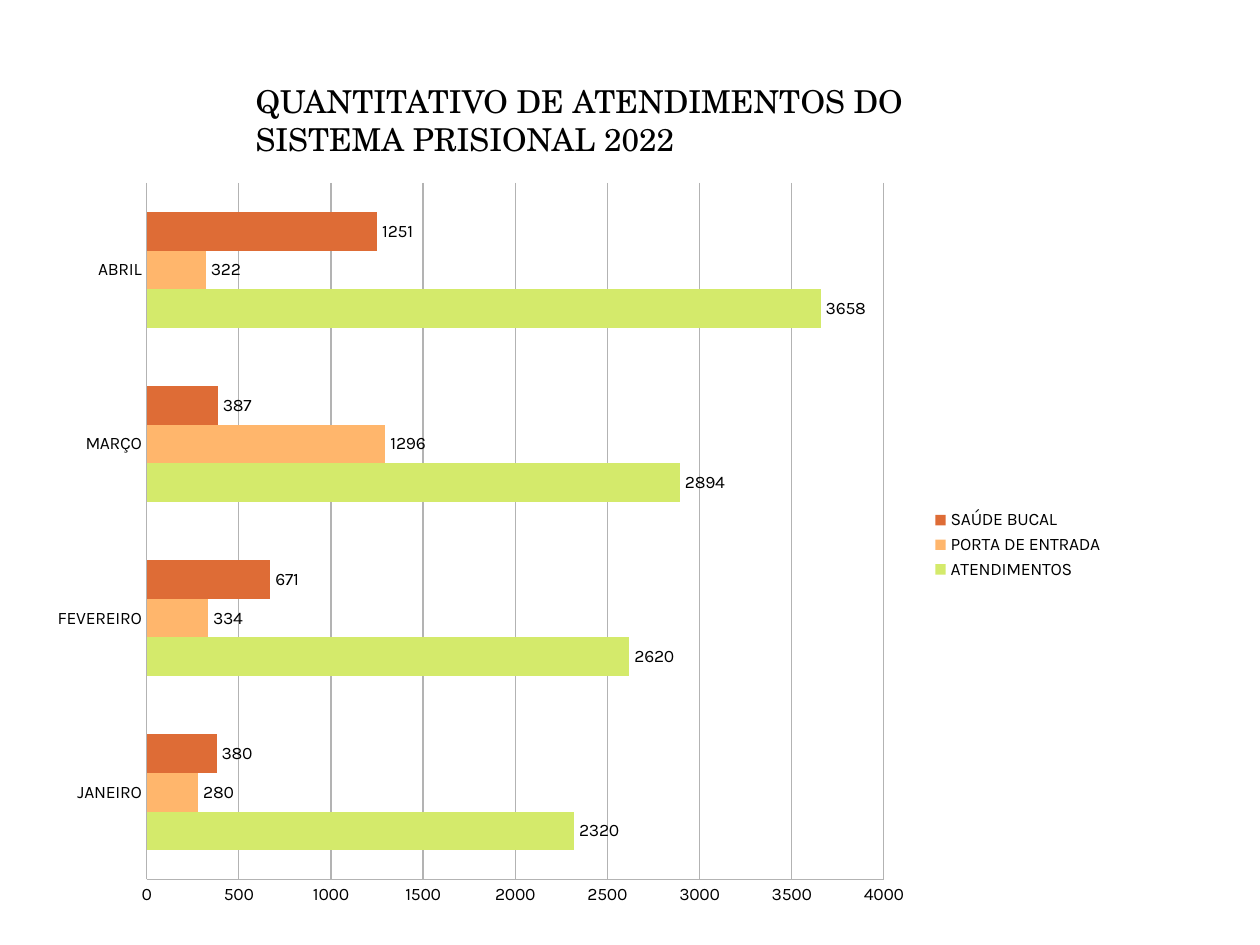
from lxml import etree
from pptx import Presentation
from pptx.chart.data import CategoryChartData
from pptx.dml.color import RGBColor
from pptx.enum.chart import (XL_CHART_TYPE, XL_LABEL_POSITION,
                             XL_LEGEND_POSITION, XL_TICK_MARK)
from pptx.enum.text import MSO_ANCHOR
from pptx.oxml import parse_xml
from pptx.oxml.ns import nsdecls
from pptx.util import Inches, Pt

COLORS = {"text": "000000", "axis": "B3B3B3", "background": "FFFFFF",
          "ATENDIMENTOS": "D4EA6B", "PORTA DE ENTRADA": "FFB66C",
          "SAÚDE BUCAL": "DE6C36"}
FORMATS = {"title": {"name": "TeX Gyre Schola", "size": Pt(18)},
           "chart": {"name": "Karla", "size": Pt(10), "bold": False}}
MONTHS = ["JANEIRO", "FEVEREIRO", "MARÇO", "ABRIL"]
SERVICES = {"ATENDIMENTOS": [2320, 2620, 2894, 3658],
            "PORTA DE ENTRADA": [280, 334, 1296, 322],
            "SAÚDE BUCAL": [380, 671, 387, 1251]}


def rgb(name):
    return RGBColor.from_string(COLORS[name])


class Deck:
    """Holds the style and the current slide; boxes are shares of its size."""

    def __init__(self, width, height):
        self.prs = Presentation()
        self.prs.slide_width, self.prs.slide_height = Inches(width), Inches(height)
        self.s = self.prs.slides.add_slide(self.prs.slide_layouts[6])
        fill = self.s.background.fill
        fill.solid()
        fill.fore_color.rgb = rgb("background")

    def box(self, x, y, w, h):
        width, height = self.prs.slide_width, self.prs.slide_height
        return int(x * width), int(y * height), int(w * width), int(h * height)

    def style(self, font, kind):
        for key, value in FORMATS[kind].items():
            setattr(font, key, value)
        font.color.rgb = rgb("text")

    def text(self, share, words, kind):
        tf = self.s.shapes.add_textbox(*self.box(*share)).text_frame
        tf.word_wrap = True
        tf.vertical_anchor = MSO_ANCHOR.TOP
        r = tf.paragraphs[0].add_run()
        r.text = words
        self.style(r.font, kind)

    def line(self, fmt):
        fmt.line.color.rgb = rgb("axis")
        fmt.line.width = Pt(0.75)

    def bar_chart(self, share, categories, series, plot_area):
        data = CategoryChartData()
        data.categories = categories
        for name, values in series.items():
            data.add_series(name, values)
        chart = self.s.shapes.add_chart(
            XL_CHART_TYPE.BAR_CLUSTERED, *self.box(*share), data).chart
        self.style(chart.font, "chart")
        chart.has_title = False

        # Legend
        chart.has_legend = True
        chart.legend.position = XL_LEGEND_POSITION.RIGHT
        chart.legend.include_in_layout = False
        self.style(chart.legend.font, "chart")

        # Axes
        for axis in (chart.category_axis, chart.value_axis):
            axis.major_tick_mark = axis.minor_tick_mark = XL_TICK_MARK.NONE
            self.style(axis.tick_labels.font, "chart")
            self.line(axis.format)
        chart.category_axis.has_major_gridlines = False
        chart.value_axis.has_major_gridlines = True
        self.line(chart.value_axis.major_gridlines.format)
        for key, value in {"minimum_scale": 0, "maximum_scale": 4000,
                           "major_unit": 500}.items():
            setattr(chart.value_axis, key, value)

        # Bars and their values
        plot = chart.plots[0]
        plot.gap_width, plot.overlap, plot.vary_by_categories = 150, 0, False
        for ser in plot.series:
            ser.format.fill.solid()
            ser.format.fill.fore_color.rgb = rgb(ser.name)
            labels = ser.data_labels
            labels.show_value = True
            labels.position = XL_LABEL_POSITION.OUTSIDE_END
            self.style(labels.font, "chart")
        self.place_plot(chart, plot_area)

    def place_plot(self, chart, plot_area):
        area = chart._chartSpace.chart.plotArea
        for old in area.findall("{*}layout"):
            area.remove(old)
        layout = parse_xml(f'<c:layout {nsdecls("c")}><c:manualLayout/></c:layout>')
        values = {"layoutTarget": "inner", "xMode": "edge", "yMode": "edge"}
        values.update(zip("xywh", plot_area))
        ns = layout.nsmap["c"]
        for tag, value in values.items():
            etree.SubElement(layout[0], f"{{{ns}}}{tag}").set("val", str(value))
        area.insert(0, layout)


def main():
    deck = Deck(10, 7.5)
    # Monthly services
    deck.bar_chart((0.028, 0.175, 0.858, 0.803), MONTHS, SERVICES,
                   (0.103, 0.023, 0.682, 0.918))
    # Title
    deck.text((0.193, 0.08, 0.557, 0.135),
              "QUANTITATIVO DE ATENDIMENTOS DO SISTEMA PRISIONAL 2022", "title")
    deck.prs.save("out.pptx")


if __name__ == "__main__":
    main()
